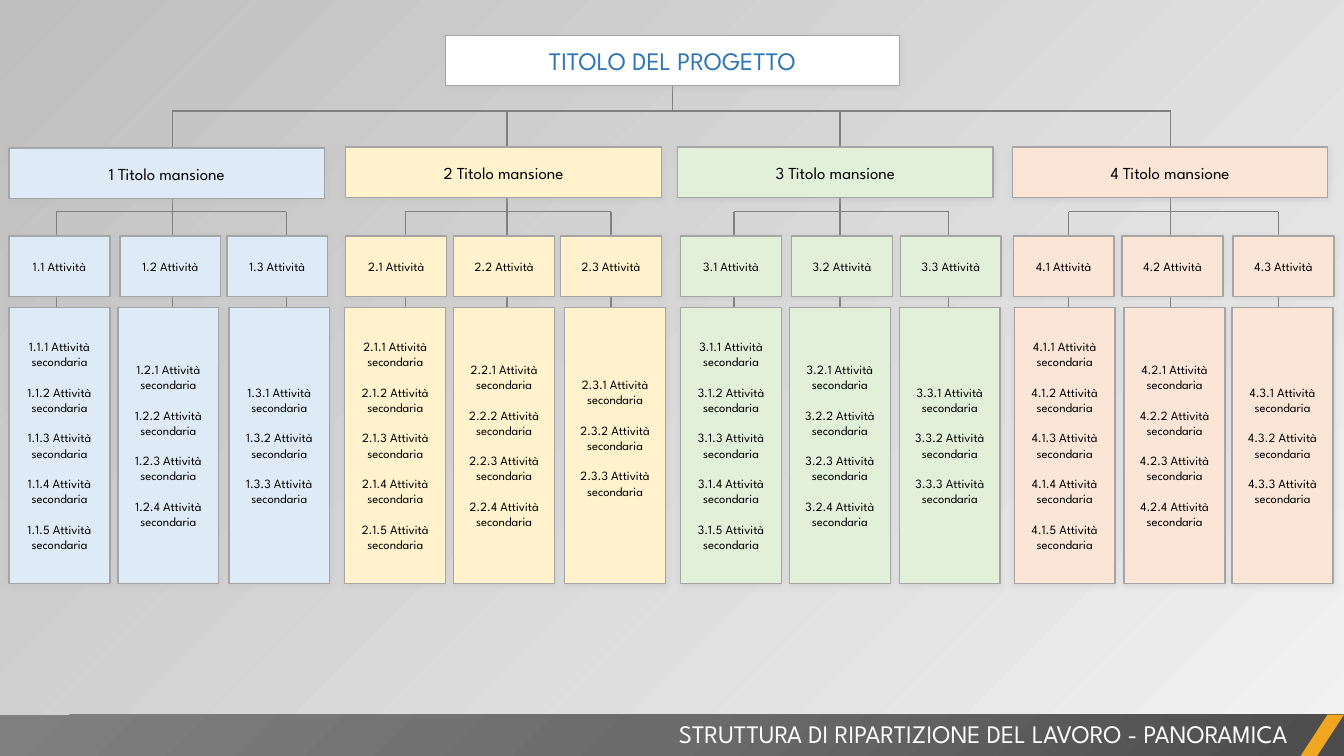
from pptx import Presentation
from pptx.dml.color import RGBColor
from pptx.enum.shapes import MSO_CONNECTOR, MSO_SHAPE
from pptx.enum.text import MSO_ANCHOR, PP_ALIGN
from pptx.oxml import parse_xml
from pptx.oxml.ns import nsdecls, qn
from pptx.util import Inches, Pt

RECT, SLANT = MSO_SHAPE.RECTANGLE, MSO_SHAPE.PARALLELOGRAM
STRAIGHT = MSO_CONNECTOR.STRAIGHT
MIDDLE, TOP = MSO_ANCHOR.MIDDLE, MSO_ANCHOR.TOP
CENTER, RIGHT = PP_ALIGN.CENTER, PP_ALIGN.RIGHT

FONT = "League Spartan"
WIDE, HIGH = 13.33, 7.5
COLORS = {
    "pale": "F2F2F2", "grey": "BFBFBF", "edge": "A5A5A5", "link": "808080",
    "white": "FFFFFF", "black": "000000", "title": "2E75B6", "accent": "F0A622",
    "blue": "DEEBF7", "yellow": "FFF2CC", "green": "E2F0D9", "peach": "FBE5D6",
    "dark": "4C4C4C", "mid": "6B6B6B",
}

# Levels of the tree
RAIL, FORK, FOOT = 1.1, 2.1, 3.33
ACT_TOP, ACT_HIGH = 2.34, 0.6
SUB_TOP, SUB_HIGH = 3.05, 2.74
COL_WIDE, HEAD_WIDE, HEAD_HIGH = 1, 3.13, 0.5
LINE_GAP = Pt(10.9)
COUNTS = (5, 4, 3)

# Fill, head corner, then the x of the drops, activities and subtasks
BRANCHES = [
    ("blue", (0.09, 1.47), (0.56, 1.71, 2.84), (0.09, 1.19, 2.25), (0.09, 1.17, 2.27)),
    ("yellow", (3.43, 1.46), (4.02, 5.03, 6.06), (3.43, 4.5, 5.56), (3.42, 4.5, 5.6)),
    ("green", (6.72, 1.46), (7.28, 8.33, 9.41), (6.75, 7.85, 8.93), (6.75, 7.83, 8.92)),
    ("peach", (10.04, 1.46), (10.6, 11.61, 12.68), (10.05, 11.13, 12.23), (10.06, 11.15, 12.22)),
]


def rgb(name):
    return RGBColor.from_string(COLORS[name])


def write(frame, lines, size, color, align=CENTER, anchor=MIDDLE):
    frame.word_wrap = True
    frame.vertical_anchor = anchor
    for i, line in enumerate(lines):
        para = frame.paragraphs[0] if i == 0 else frame.add_paragraph()
        para.alignment = align
        if i:
            para.space_before = LINE_GAP
        run = para.add_run()
        run.text = line
        run.font.size, run.font.name = Pt(size), FONT
        run.font.color.rgb = rgb(color)


def add_box(slide, box, fill, lines, size, color="black"):
    shape = slide.shapes.add_shape(RECT, *map(Inches, box))
    shape.fill.solid()
    shape.fill.fore_color.rgb = rgb(fill)
    shape.line.color.rgb = rgb("edge")
    shape.line.width = Pt(1)
    shape.shadow.inherit = False
    shape.element.spPr.find(qn("a:effectLst")).append(parse_xml(
        f'<a:outerShdw {nsdecls("a")} blurRad="50800" dist="12700" dir="5400000" '
        f'algn="t" rotWithShape="0"><a:srgbClr val="{COLORS["grey"]}">'
        '<a:alpha val="40000"/></a:srgbClr></a:outerShdw>'))
    write(shape.text_frame, lines, size, color)
    return shape


def add_link(slide, x1, y1, x2, y2):
    link = slide.shapes.add_connector(STRAIGHT, *map(Inches, (x1, y1, x2, y2)))
    link.line.color.rgb = rgb("link")
    link.line.width = Pt(1)
    link.element.spPr.append(parse_xml(f'<a:effectLst {nsdecls("a")}/>'))


def add_root(slide, box):
    left, top, wide, high = box
    mid = left + wide / 2
    add_link(slide, mid, top + high, mid, RAIL)
    add_link(slide, BRANCHES[0][2][1], RAIL, BRANCHES[-1][2][1], RAIL)
    add_box(slide, box, "white", ["TITOLO DEL PROGETTO"], 18, "title")


def add_branch(slide, num, fill, head, drops, acts, subs):
    # Links lie behind the boxes
    add_link(slide, drops[0], FORK, drops[2], FORK)
    for x, top in zip(drops, (FORK, RAIL, FORK)):
        add_link(slide, x, top, x, FOOT)
    add_box(slide, (*head, HEAD_WIDE, HEAD_HIGH), fill, [f"{num} Titolo mansione"], 12)

    # Activities and their subtasks
    for col, (act, sub, count) in enumerate(zip(acts, subs, COUNTS), 1):
        code = f"{num}.{col}"
        add_box(slide, (act, ACT_TOP, COL_WIDE, ACT_HIGH), fill, [f"{code} Attività"], 9)
        lines = [f"{code}.{i} Attività secondaria" for i in range(1, count + 1)]
        tasks = add_box(slide, (sub, SUB_TOP, COL_WIDE, SUB_HIGH), fill, lines, 9)
        if code == "2.3":  # this list sits half a line higher
            tasks.text_frame.margin_bottom += LINE_GAP


def add_footer(slide, box):
    left, top, wide, high = box
    # Shaded band
    band = slide.shapes.add_shape(RECT, *map(Inches, box))
    stops = "".join(f'<a:gs pos="{pos}"><a:srgbClr val="{COLORS[name]}"/></a:gs>'
                    for pos, name in ((0, "dark"), (50000, "mid"), (100000, "link")))
    band.element.spPr.find(qn("a:prstGeom")).addnext(parse_xml(
        f'<a:gradFill {nsdecls("a")}><a:gsLst>{stops}</a:gsLst><a:path path="circle">'
        '<a:fillToRect l="100000" t="100000"/></a:path></a:gradFill>'))

    # Accent at the right end
    slant = slide.shapes.add_shape(
        SLANT, Inches(left + wide - 0.43), Inches(top), Inches(0.43), Inches(high))
    slant.adjustments[0] = 0.65
    slant.fill.solid()
    slant.fill.fore_color.rgb = rgb("accent")
    for shape in (band, slant):
        shape.line.fill.background()
        shape.shadow.inherit = False

    # Slide title
    label = slide.shapes.add_textbox(
        Inches(left + 1.42), Inches(top - 0.01), Inches(11.45), Inches(0.4))
    write(label.text_frame, ["STRUTTURA DI RIPARTIZIONE DEL LAVORO - PANORAMICA"],
          18, "white", RIGHT, TOP)


def add_ground(slide):
    fill = slide.background.fill
    fill.gradient()
    fill.gradient_angle = 135
    for stop, name, pos in zip(fill.gradient_stops, ("pale", "grey"), (0, 1)):
        stop.color.rgb = rgb(name)
        stop.position = pos


def main():
    deck = Presentation()
    deck.slide_width, deck.slide_height = Inches(WIDE), Inches(HIGH)
    slide = deck.slides.add_slide(deck.slide_layouts[6])
    add_ground(slide)
    add_root(slide, (4.42, 0.35, 4.5, 0.5))
    for num, branch in enumerate(BRANCHES, 1):
        add_branch(slide, num, *branch)
    add_footer(slide, (0, 7.09, WIDE, HIGH - 7.09))
    deck.save("out.pptx")


if __name__ == "__main__":
    main()
